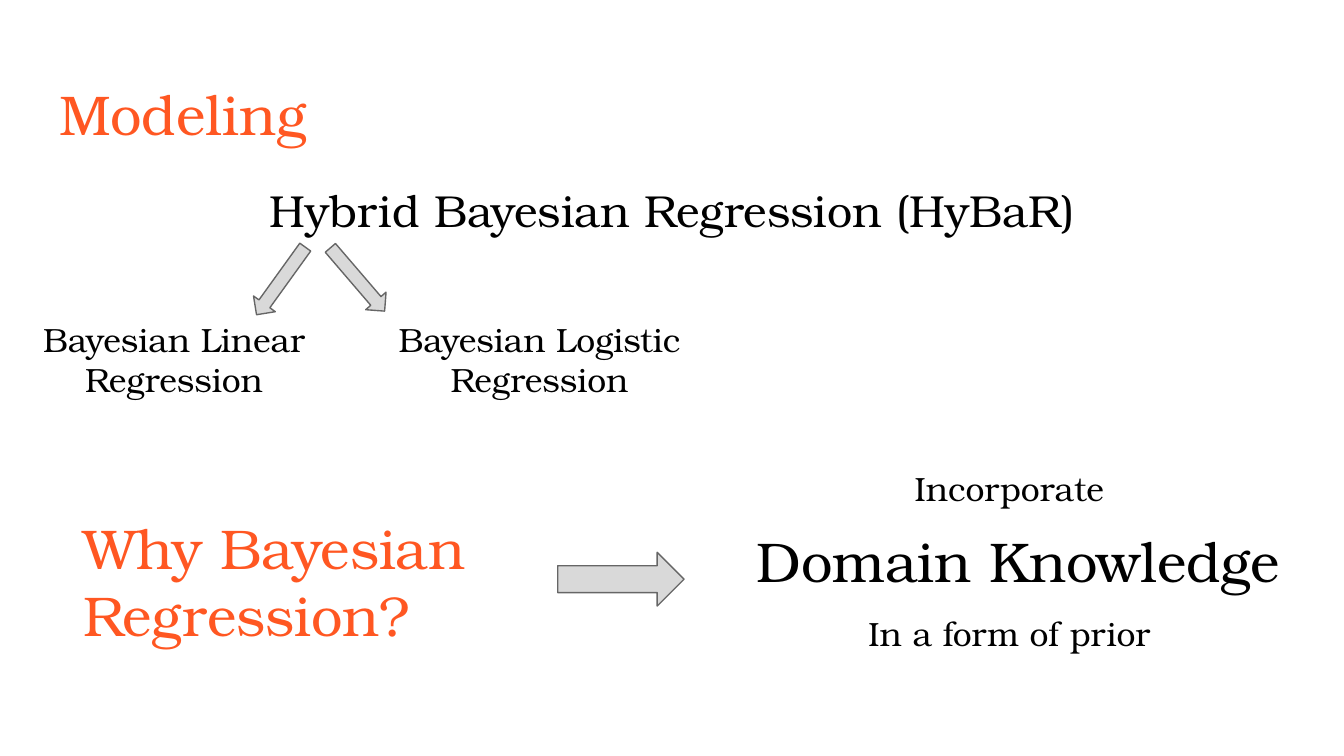
from dataclasses import dataclass

from lxml.etree import SubElement
from pptx import Presentation
from pptx.dml.color import RGBColor
from pptx.enum.shapes import MSO_SHAPE
from pptx.enum.text import MSO_ANCHOR, MSO_AUTO_SIZE, PP_ALIGN
from pptx.oxml.ns import qn
from pptx.util import Inches, Pt


@dataclass(frozen=True)
class Theme:
    """Colours, font and type sizes of the slide."""

    font: str = "TeX Gyre Bonum"
    accent: RGBColor = RGBColor(0xFF, 0x57, 0x22)
    text: RGBColor = RGBColor(0, 0, 0)
    arrow_fill: RGBColor = RGBColor(0xD9, 0xD9, 0xD9)
    arrow_line: RGBColor = RGBColor(0x66, 0x66, 0x66)
    heading: int = 30
    subheading: int = 24
    label: int = 18


THEME = Theme()


def place(shape, left, top, width, height):
    """Set the position and size of a shape in inches."""
    shape.left, shape.top = Inches(left), Inches(top)
    shape.width, shape.height = Inches(width), Inches(height)


def write(shape, lines, color=THEME.text, alignment=PP_ALIGN.CENTER):
    """Fill a shape with (text, size) lines, one paragraph each."""
    frame = shape.text_frame
    frame.word_wrap = True
    frame.auto_size = MSO_AUTO_SIZE.NONE
    frame.vertical_anchor = MSO_ANCHOR.TOP
    frame.margin_left = frame.margin_right = Inches(0.1)
    frame.margin_top = frame.margin_bottom = Inches(0.1)
    frame.text = "\n".join(text for text, size in lines)
    for index, (paragraph, (text, size)) in enumerate(zip(frame.paragraphs, lines)):
        paragraph.alignment = alignment
        paragraph.space_before = Pt(10 if index else 0)
        for run in paragraph.runs:
            run.font.name = THEME.font
            run.font.size = Pt(size)
            run.font.color.rgb = color


def remove_bullet(paragraph):
    """Turn off the bullet and hanging indent of a paragraph."""
    properties = paragraph._p.get_or_add_pPr()
    properties.set("marL", "0")
    properties.set("indent", "0")
    SubElement(properties, qn("a:buNone"))


def add_text(slide, box, lines, **style):
    """Add a text box with formatted lines."""
    shape = slide.shapes.add_textbox(*map(Inches, box))
    write(shape, lines, **style)


def add_arrow(slide, box, rotation=0):
    """Add a grey block arrow."""
    shape = slide.shapes.add_shape(MSO_SHAPE.RIGHT_ARROW, *map(Inches, box))
    shape.rotation = rotation
    shape.shadow.inherit = False
    shape.fill.solid()
    shape.fill.fore_color.rgb = THEME.arrow_fill
    shape.line.color.rgb = THEME.arrow_line
    shape.line.width = Pt(0.75)


def main():
    """Build and save the modeling slide."""
    presentation = Presentation()
    presentation.slide_width = Inches(10)
    presentation.slide_height = Inches(10 * 9 / 16)
    slide = presentation.slides.add_slide(presentation.slide_layouts[1])

    title, body = slide.placeholders
    place(title, 0.34, 0.49, 9.32, 0.63)
    write(title, [("Modeling", THEME.heading)], THEME.accent, PP_ALIGN.LEFT)
    place(body, 0.34, 1.26, 9.32, 0.52)
    write(body, [("Hybrid Bayesian Regression (HyBaR)", THEME.subheading)])
    remove_bullet(body.text_frame.paragraphs[0])

    add_arrow(slide, (2.35, 1.98, 0.62, 0.2), 49.4)
    add_arrow(slide, (1.78, 1.99, 0.62, 0.2), 125.8)
    add_text(slide, (0.11, 2.27, 2.37, 0.63),
             [("Bayesian Linear Regression", THEME.label)])
    add_text(slide, (2.53, 2.27, 2.97, 0.63),
             [("Bayesian Logistic Regression", THEME.label)])

    add_text(slide, (0.52, 3.72, 3.86, 1.04),
             [("Why Bayesian Regression?", THEME.heading)],
             color=THEME.accent, alignment=PP_ALIGN.LEFT)
    add_arrow(slide, (4.15, 4.11, 0.94, 0.4))
    add_text(slide, (5.08, 3.38, 4.86, 1.9),
             [("Incorporate", THEME.label),
              (" Domain Knowledge", THEME.heading),
              ("In a form of prior", THEME.label)])

    presentation.save("out.pptx")


if __name__ == "__main__":
    main()
